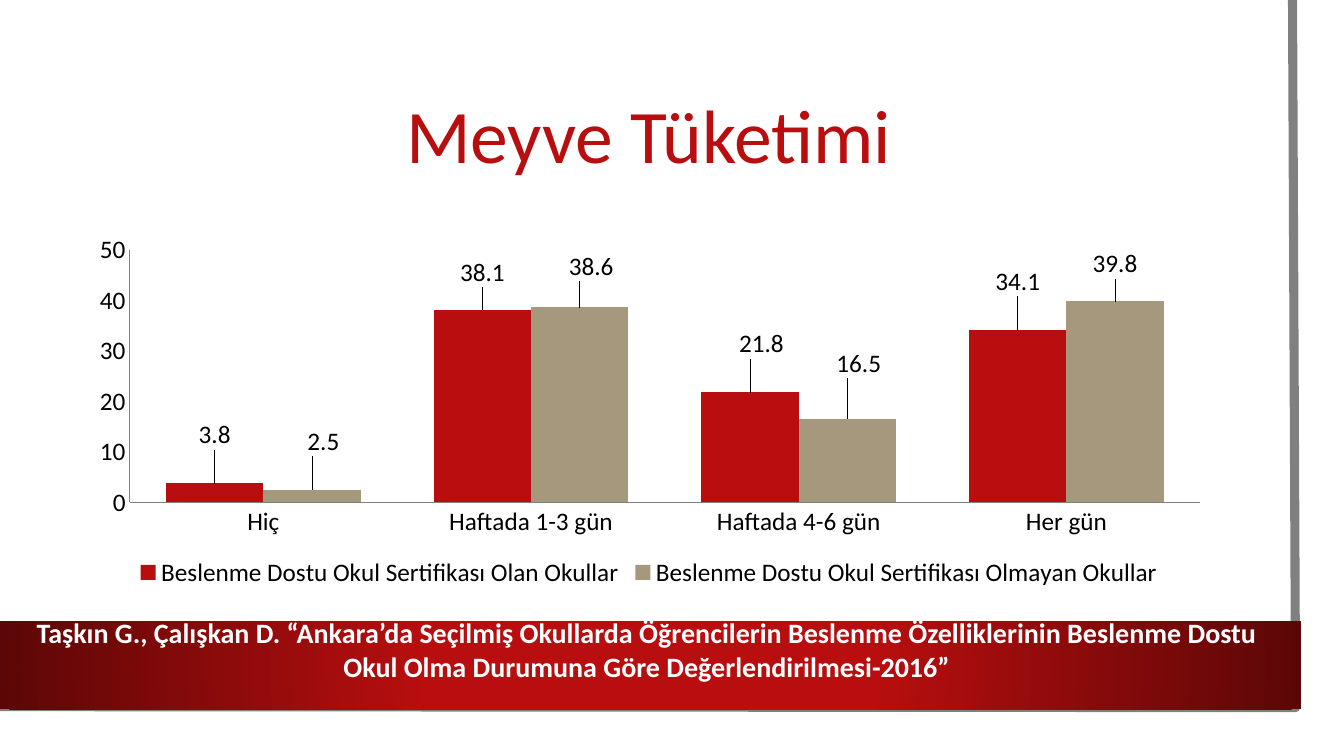
from dataclasses import dataclass
from typing import Any

import pptx
import pptx.chart.data
import pptx.dml.color
import pptx.enum.chart
import pptx.enum.shapes
import pptx.enum.text
import pptx.oxml
import pptx.oxml.ns
import pptx.util

SLIDE_WIDTH = pptx.util.Inches(13.33)
SLIDE_HEIGHT = pptx.util.Inches(7.5)
FONT = "Calibri"
RED, DARK_RED, SAND = "B80E0F", "5C0707", "A6987D"
WHITE, BLACK, GREY = "FFFFFF", "000000", "808080"


@dataclass(frozen=True)
class Area:
    left: float
    top: float
    width: float
    height: float

    def box(self) -> tuple[int, int, int, int]:
        return (across(self.left), down(self.top), across(self.width), down(self.height))


@dataclass(frozen=True)
class SchoolGroup:
    name: str
    shares: tuple[float, ...]
    fill: str
    label_shifts: tuple[tuple[float, float], ...]


TITLE_AREA = Area(5.63, 10, 85.3, 16.8)
CHART_AREA = Area(5.63, 30.13, 85.3, 48.27)
BAND_AREA = Area(0, 82.2, 96.8, 11.6)
CITATION_AREA = Area(0, 80.8, 96.25, 10.27)
FRAME_CORNERS = ((96.17, 0), (96.4, 93.6), (-0.23, 93.47))
FREQUENCIES = ("Hiç", "Haftada 1-3 gün", "Haftada 4-6 gün", "Her gün")
GROUPS = (
    SchoolGroup(
        "Beslenme Dostu Okul Sertifikası Olan Okullar",
        (3.8, 38.1, 21.8, 34.1),
        RED,
        ((0.0, -0.08), (0.0, -0.05), (0.01, -0.08), (0.0, -0.08)),
    ),
    SchoolGroup(
        "Beslenme Dostu Okul Sertifikası Olmayan Okullar",
        (2.5, 38.6, 16.5, 39.8),
        SAND,
        ((0.01, -0.08), (0.01, -0.06), (0.01, -0.1), (0.0, -0.05)),
    ),
)
CITATION = (
    "Taşkın G., Çalışkan D. “Ankara’da Seçilmiş Okullarda Öğrencilerin Beslenme "
    "Özelliklerinin Beslenme Dostu Okul Olma Durumuna Göre Değerlendirilmesi-2016”"
)


def across(percent: float) -> int:
    return round(SLIDE_WIDTH * percent / 100)


def down(percent: float) -> int:
    return round(SLIDE_HEIGHT * percent / 100)


def colour(value: str) -> pptx.dml.color.RGBColor:
    return pptx.dml.color.RGBColor.from_string(value)


def apply(target: Any, formats: dict[str, Any]) -> None:
    for attribute, value in formats.items():
        setattr(target, attribute, value)


def format_font(font: Any, size: float, fill: str, bold: bool = False) -> None:
    apply(font, {"name": FONT, "size": pptx.util.Pt(size), "bold": bold})
    font.color.rgb = colour(fill)


def place(shape: Any, area: Area) -> None:
    apply(shape, dict(zip(("left", "top", "width", "height"), area.box())))


def write(shape: Any, text: str, size: float, fill: str, anchor: Any,
          bold: bool = False, spacing: float = 1.0) -> None:
    frame = shape.text_frame
    apply(frame, {"text": text, "word_wrap": True, "vertical_anchor": anchor,
                  "auto_size": pptx.enum.text.MSO_AUTO_SIZE.NONE})
    paragraph = frame.paragraphs[0]
    apply(paragraph, {"alignment": pptx.enum.text.PP_ALIGN.CENTER, "line_spacing": spacing})
    format_font(paragraph.runs[0].font, size, fill, bold)


def draw_frame(slide: Any) -> None:
    start, *rest = [(across(x), down(y)) for x, y in FRAME_CORNERS]
    builder = slide.shapes.build_freeform(*start)
    builder.add_line_segments(rest, close=False)
    frame = builder.convert_to_shape()
    frame.shadow.inherit = False
    frame.fill.background()
    frame.line.color.rgb = colour(GREY)
    frame.line.width = pptx.util.Pt(6.5)


def draw_band(slide: Any) -> None:
    band = slide.shapes.add_shape(pptx.enum.shapes.MSO_SHAPE.RECTANGLE, *BAND_AREA.box())
    band.shadow.inherit = False
    band.line.fill.background()
    gradient = pptx.oxml.parse_xml(
        f'<a:gradFill {pptx.oxml.ns.nsdecls("a")} rotWithShape="1"><a:gsLst>'
        f'<a:gs pos="34000"><a:srgbClr val="{RED}"/></a:gs>'
        f'<a:gs pos="100000"><a:srgbClr val="{DARK_RED}"/></a:gs></a:gsLst>'
        '<a:path path="circle"><a:fillToRect l="50000" t="50000" r="50000" b="50000"/>'
        "</a:path></a:gradFill>"
    )
    band.element.spPr.find(pptx.oxml.ns.qn("a:prstGeom")).addnext(gradient)


def manual_layout(**places: Any) -> Any:
    entries = "".join(f'<c:{tag} val="{value}"/>' for tag, value in places.items())
    return pptx.oxml.parse_xml(
        f'<c:layout {pptx.oxml.ns.nsdecls("c")}><c:manualLayout>{entries}'
        "</c:manualLayout></c:layout>"
    )


def format_group(series: Any, group: SchoolGroup) -> None:
    series.format.fill.solid()
    series.format.fill.fore_color.rgb = colour(group.fill)
    series.data_labels.show_value = True
    for index, (x, y) in enumerate(group.label_shifts):
        label = series.points[index].data_label
        label.position = pptx.enum.chart.XL_LABEL_POSITION.OUTSIDE_END
        entry = series.data_labels._element.find(f'{pptx.oxml.ns.qn("c:dLbl")}[{index + 1}]')
        entry.find(pptx.oxml.ns.qn("c:idx")).addnext(manual_layout(x=x, y=y))


def draw_chart(slide: Any) -> None:
    data = pptx.chart.data.CategoryChartData()
    data.categories = FREQUENCIES
    for group in GROUPS:
        data.add_series(group.name, group.shares)
    chart = slide.shapes.add_chart(
        pptx.enum.chart.XL_CHART_TYPE.COLUMN_CLUSTERED, *CHART_AREA.box(), data
    ).chart
    format_font(chart.font, 18, BLACK)
    apply(chart, {"has_title": False, "has_legend": True})
    apply(chart.legend, {"position": pptx.enum.chart.XL_LEGEND_POSITION.BOTTOM,
                         "include_in_layout": False})
    apply(chart.plots[0], {"gap_width": 75, "overlap": 0, "vary_by_categories": False})
    apply(chart.value_axis, {"minimum_scale": 0, "maximum_scale": 50, "major_unit": 10})
    for axis in (chart.category_axis, chart.value_axis):
        apply(axis, {"has_major_gridlines": False,
                     "major_tick_mark": pptx.enum.chart.XL_TICK_MARK.NONE})
        axis.format.line.color.rgb = colour(GREY)
        axis.format.line.width = pptx.util.Pt(0.75)
    for series, group in zip(chart.plots[0].series, GROUPS):
        format_group(series, group)
    plot_area = chart._chartSpace.chart.plotArea
    for automatic in plot_area.findall(pptx.oxml.ns.qn("c:layout")):
        plot_area.remove(automatic)
    plot_area.insert(0, manual_layout(layoutTarget="inner", xMode="edge", yMode="edge",
                                      x=0.047, y=0.06, w=0.934, h=0.693))


def main() -> None:
    presentation = pptx.Presentation()
    apply(presentation, {"slide_width": SLIDE_WIDTH, "slide_height": SLIDE_HEIGHT})
    slide = presentation.slides.add_slide(presentation.slide_layouts[5])
    draw_frame(slide)
    draw_band(slide)
    title = slide.shapes.title
    place(title, TITLE_AREA)
    write(title, "Meyve Tüketimi", 54, RED, pptx.enum.text.MSO_ANCHOR.MIDDLE, spacing=0.9)
    draw_chart(slide)
    citation = slide.shapes.add_textbox(*CITATION_AREA.box())
    write(citation, CITATION, 20, WHITE, pptx.enum.text.MSO_ANCHOR.TOP, bold=True)
    presentation.save("out.pptx")


if __name__ == "__main__":
    main()
